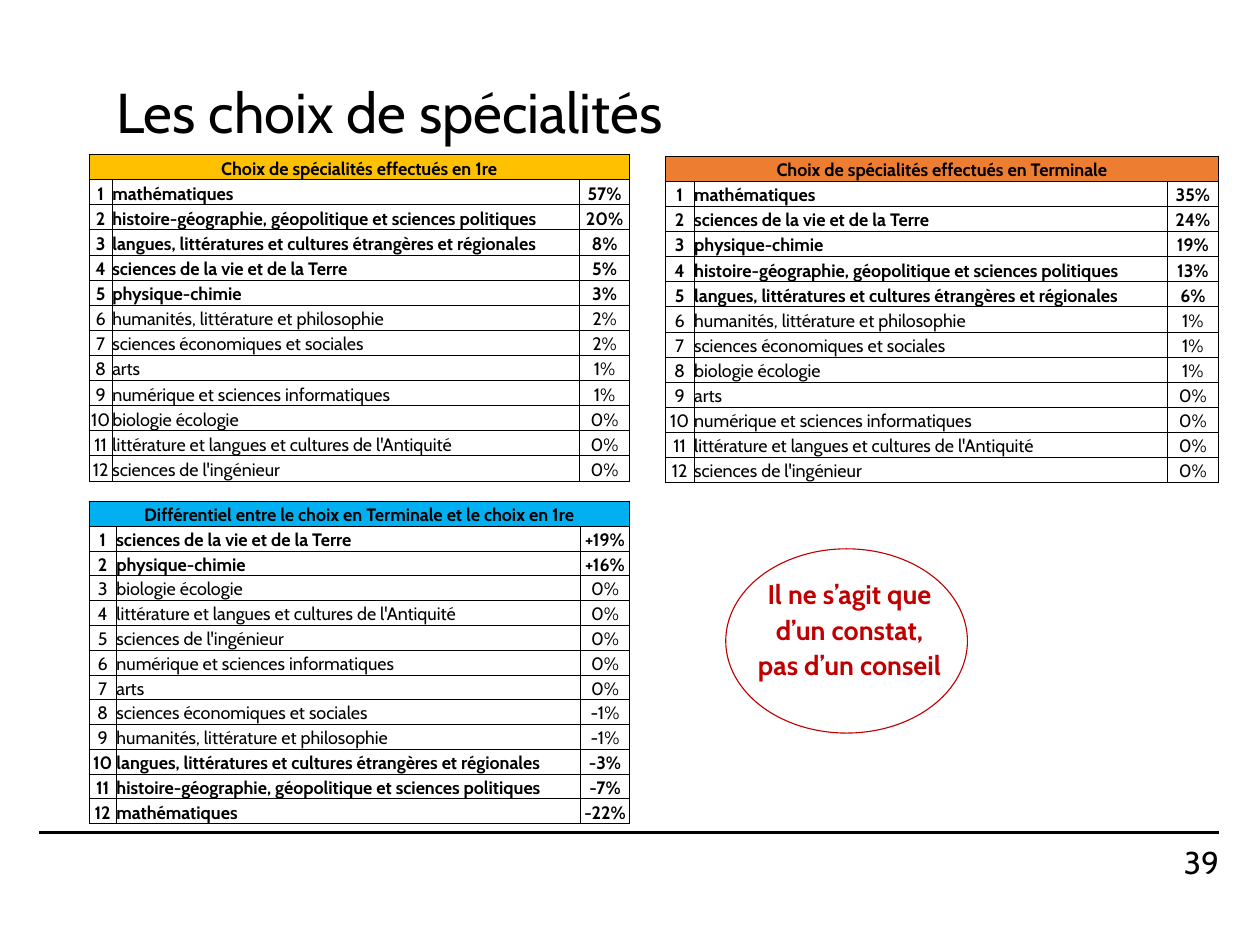
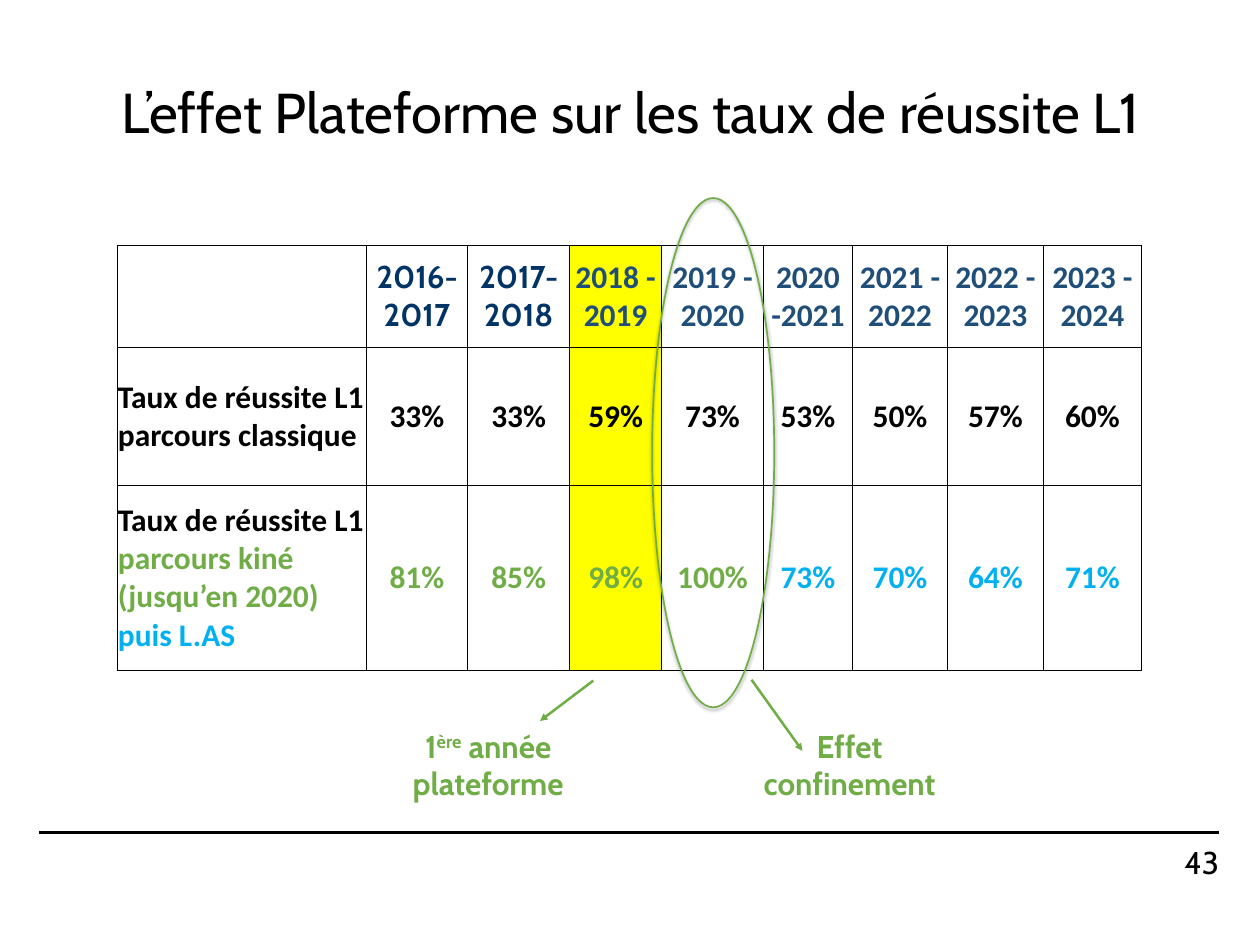
from lxml import etree
from pptx import Presentation
from pptx.dml.color import RGBColor
from pptx.enum.shapes import MSO_CONNECTOR, MSO_SHAPE
from pptx.enum.text import MSO_ANCHOR, MSO_AUTO_SIZE, PP_ALIGN
from pptx.oxml import parse_xml
from pptx.oxml.ns import nsdecls, qn
from pptx.util import Inches, Pt

LEFT, CENTER, RIGHT = PP_ALIGN.LEFT, PP_ALIGN.CENTER, PP_ALIGN.RIGHT
MIDDLE, BOTTOM = MSO_ANCHOR.MIDDLE, MSO_ANCHOR.BOTTOM
ELLIPSE, STRAIGHT = MSO_SHAPE.OVAL, MSO_CONNECTOR.STRAIGHT

BLACK, WHITE, RED = "000000", "FFFFFF", "C00000"
AMBER, ORANGE, SKY = "FFC000", "ED7D31", "00B0F0"
GREEN, YELLOW, NAVY, BLUE = "70AD47", "FFFF00", "003366", "1F4E79"

prs = Presentation()
prs.slide_width, prs.slide_height = Inches(15.59), Inches(11.69)
# One column and one row are 1 % of the slide's width and height.
COL, ROW = prs.slide_width / 100, prs.slide_height / 100


def at(x, y, w, h):
    """Turn grid columns and rows into lengths."""
    return int(x * COL), int(y * ROW), int(w * COL), int(h * ROW)


def style(tf, size, color=BLACK, align=LEFT, bold=False, font="Cabin"):
    tf.word_wrap = True
    for p in tf.paragraphs:
        p.alignment = align
        for r in p.runs:
            r.font.size, r.font.bold, r.font.name = Pt(size), bold, font
            r.font.color.rgb = RGBColor.from_string(color)


# Shared title and page number
slides = []
for title, left, number in [
    ("Les choix de spécialités", 8.6, "39"),
    ("L’effet Plateforme sur les taux de réussite L1", 9, "43"),
]:
    s = prs.slides.add_slide(prs.slide_layouts[5])
    slides.append(s)
    sp = s.shapes.title
    sp.left, sp.top, sp.width, sp.height = at(left, 3.9, 88, 16.68)
    tf = sp.text_frame
    tf.text = title
    tf.auto_size, tf.vertical_anchor = MSO_AUTO_SIZE.NONE, MIDDLE
    tf.paragraphs[0].line_spacing = 0.9
    style(tf, 50)

    tf = s.shapes.add_textbox(*at(82.1, 89.22, 14.65, 4)).text_frame
    tf.text = number
    tf.margin_left = tf.margin_right = tf.margin_top = tf.margin_bottom = 0
    tf.vertical_anchor = MIDDLE
    style(tf, 28, align=RIGHT)
choices, success = slides

# Rankings of subjects
MATHS = "mathématiques"
HISTORY = "histoire-géographie, géopolitique et sciences politiques"
LANGUAGES = "langues, littératures et cultures étrangères et régionales"
LIFE = "sciences de la vie et de la Terre"
PHYSICS = "physique-chimie"
HUMANITIES = "humanités, littérature et philosophie"
ECONOMICS = "sciences économiques et sociales"
ARTS = "arts"
COMPUTING = "numérique et sciences informatiques"
ECOLOGY = "biologie écologie"
ANTIQUITY = "littérature et langues et cultures de l'Antiquité"
ENGINEERING = "sciences de l'ingénieur"

rankings = [
    ("Choix de spécialités effectués en 1re", AMBER, "{}%",
     (7.06, 16.34, 42.91, 34.56), (1.86, 37.07, 3.98),
     [(MATHS, 57), (HISTORY, 20), (LANGUAGES, 8), (LIFE, 5), (PHYSICS, 3),
      (HUMANITIES, 2), (ECONOMICS, 2), (ARTS, 1), (COMPUTING, 1),
      (ECOLOGY, 0), (ANTIQUITY, 0), (ENGINEERING, 0)]),
    ("Choix de spécialités effectués en Terminale", ORANGE, "{}%",
     (52.79, 16.51, 43.94, 34.56), (2.31, 37.52, 4.11),
     [(MATHS, 35), (LIFE, 24), (PHYSICS, 19), (HISTORY, 13), (LANGUAGES, 6),
      (HUMANITIES, 1), (ECONOMICS, 1), (ECOLOGY, 1), (ARTS, 0),
      (COMPUTING, 0), (ANTIQUITY, 0), (ENGINEERING, 0)]),
    ("Différentiel entre le choix en Terminale et le choix en 1re", SKY, "{:+}%",
     (7.06, 53.04, 42.91, 34.13), (2.18, 36.82, 3.91),
     [(LIFE, 19), (PHYSICS, 16), (ECOLOGY, 0), (ANTIQUITY, 0),
      (ENGINEERING, 0), (COMPUTING, 0), (ARTS, 0), (ECONOMICS, -1),
      (HUMANITIES, -1), (LANGUAGES, -3), (HISTORY, -7), (MATHS, -22)]),
]
tables = []
for heading, color, pattern, place, widths, subjects in rankings:
    table = choices.shapes.add_table(len(subjects) + 1, 3, *at(*place)).table
    tables.append((table, 0.5, BOTTOM, {(0, 0): color}))
    for column, width in zip(table.columns, widths):
        column.width = int(width * COL)
    cell = table.cell(0, 0)
    cell.merge(table.cell(0, 2))
    cell.text = heading
    style(cell.text_frame, 16, align=CENTER, bold=True)
    for i, (subject, share) in enumerate(subjects, 1):
        percent = pattern.format(share) if share else "0%"
        for j, text in enumerate((str(i), subject, percent)):
            cell = table.cell(i, j)
            cell.text = text
            style(cell.text_frame, 16, align=LEFT if j == 1 else CENTER,
                  bold=abs(share) >= 3)

# Remark in an ellipse
group = choices.shapes.add_group_shape()
tf = group.shapes.add_textbox(*at(60.1, 60.82, 14.63, 15.23)).text_frame
tf.text = "Il ne s’agit que d’un constat, pas d’un conseil"
tf.margin_left = tf.margin_right = tf.margin_top = tf.margin_bottom = 0
tf.paragraphs[0].line_spacing = 1.1
style(tf, 24, RED, CENTER, True)
remark = group.shapes.add_shape(ELLIPSE, *at(57.6, 58.08, 19.18, 19.5))

# Success rates by year
years = ["2016-2017", "2017-2018", "2018 - 2019", "2019 - 2020", "2020 -2021",
         "2021 - 2022", "2022 - 2023", "2023 - 2024"]
classic = [33, 33, 59, 73, 53, 50, 57, 60]
health = [81, 85, 98, 100, 73, 70, 64, 71]
widths = [19.69, 8.08, 8.08, 7.31, 8.08, 7.06, 7.57, 7.57, 7.83]
heights = [10.78, 14.63, 19.5]
table = success.shapes.add_table(
    3, 9, *at(9.36, 26, sum(widths), sum(heights))).table
tables.append((table, 1, MIDDLE, {(i, 3): YELLOW for i in range(3)}))
for column, width in zip(table.columns, widths):
    column.width = int(width * COL)
for row, height in zip(table.rows, heights):
    row.height = int(height * ROW)
for j, (year, rate, health_rate) in enumerate(zip(years, classic, health), 1):
    font, color = ("Cabin", NAVY) if j < 3 else ("Calibri", BLUE)
    for i, (text, cell_font, cell_color) in enumerate([
        (year, font, color),
        (f"{rate}%", "Calibri", BLACK),
        (f"{health_rate}%", "Calibri", GREEN if j < 5 else SKY),
    ]):
        cell = table.cell(i, j)
        cell.text = text
        style(cell.text_frame, 28, cell_color, CENTER, True, cell_font)
for i, parts in enumerate([
    [("Taux de réussite L1 parcours classique", BLACK)],
    [("Taux de réussite L1 ", BLACK), ("parcours kiné (jusqu’en 2020) ", GREEN),
     ("puis L.AS", SKY)],
], 1):
    tf = table.cell(i, 0).text_frame
    for text, color in parts:
        tf.paragraphs[0].add_run().text = text
    style(tf, 28, bold=True, font="Calibri")
    for r, (text, color) in zip(tf.paragraphs[0].runs, parts):
        r.font.color.rgb = RGBColor.from_string(color)

# Fill, borders and margins of every table
for table, border, anchor, fills in tables:
    table.first_row = table.horz_banding = False
    for i, row in enumerate(table.rows):
        for j, cell in enumerate(row.cells):
            cell.margin_left = cell.margin_right = 0
            cell.margin_top = cell.margin_bottom = 0
            cell.vertical_anchor = anchor
            cell.fill.solid()
            cell.fill.fore_color.rgb = RGBColor.from_string(
                fills.get((i, j), WHITE))
            tcPr = cell._tc.get_or_add_tcPr()
            for k, side in enumerate(("lnL", "lnR", "lnT", "lnB")):
                tcPr.insert(k, parse_xml(
                    f'<a:{side} {nsdecls("a")} w="{Pt(border)}"><a:solidFill>'
                    f'<a:srgbClr val="{BLACK}"/></a:solidFill></a:{side}>'))

# Notes on two years
for left, parts in [(59.08, ["Effet confinement"]),
                    (30.4, ["1", "ère", " année plateforme"])]:
    tf = success.shapes.add_textbox(*at(left, 76.48, 16.68, 8.9)).text_frame
    for text in parts:
        r = tf.paragraphs[0].add_run()
        r.text = text
        if text == "ère":
            r._r.get_or_add_rPr().set("baseline", "30000")
    style(tf, 28, GREEN, CENTER, True)
lockdown = success.shapes.add_shape(ELLIPSE, *at(51.76, 20.96, 9.69, 53.89))

for sp, color, width in [(remark, RED, 1), (lockdown, GREEN, 1.5)]:
    sp.shadow.inherit = False
    sp.fill.background()
    sp.line.color.rgb = RGBColor.from_string(color)
    sp.line.width = Pt(width)
effects = lockdown._element.spPr.find(qn("a:effectLst"))
effects.append(parse_xml(
    f'<a:outerShdw {nsdecls("a")} blurRad="{Pt(3.1)}" dist="{Pt(1.8)}" '
    f'dir="5400000" rotWithShape="0"><a:srgbClr val="{BLACK}">'
    '<a:alpha val="35000"/></a:srgbClr></a:outerShdw>'))

# Footer rule, kept on the master, and arrows to the notes
for ends, color, width, arrow in [
    ((3.08, 88.11, 96.73, 88.11), BLACK, 2, False),
    ((47.08, 72.03, 42.85, 76.3), GREEN, 2.25, True),
    ((59.65, 71.94, 63.69, 79.47), GREEN, 2.25, True),
]:
    line = success.shapes.add_connector(STRAIGHT, *at(*ends))
    line.line.color.rgb = RGBColor.from_string(color)
    line.line.width = Pt(width)
    etree.SubElement(line._element.spPr, qn("a:effectLst"))
    if arrow:
        etree.SubElement(line.line._get_or_add_ln(), qn("a:tailEnd"),
                         type="triangle")
    else:
        prs.slide_master.shapes.element.append(line._element)

prs.save("out.pptx")
